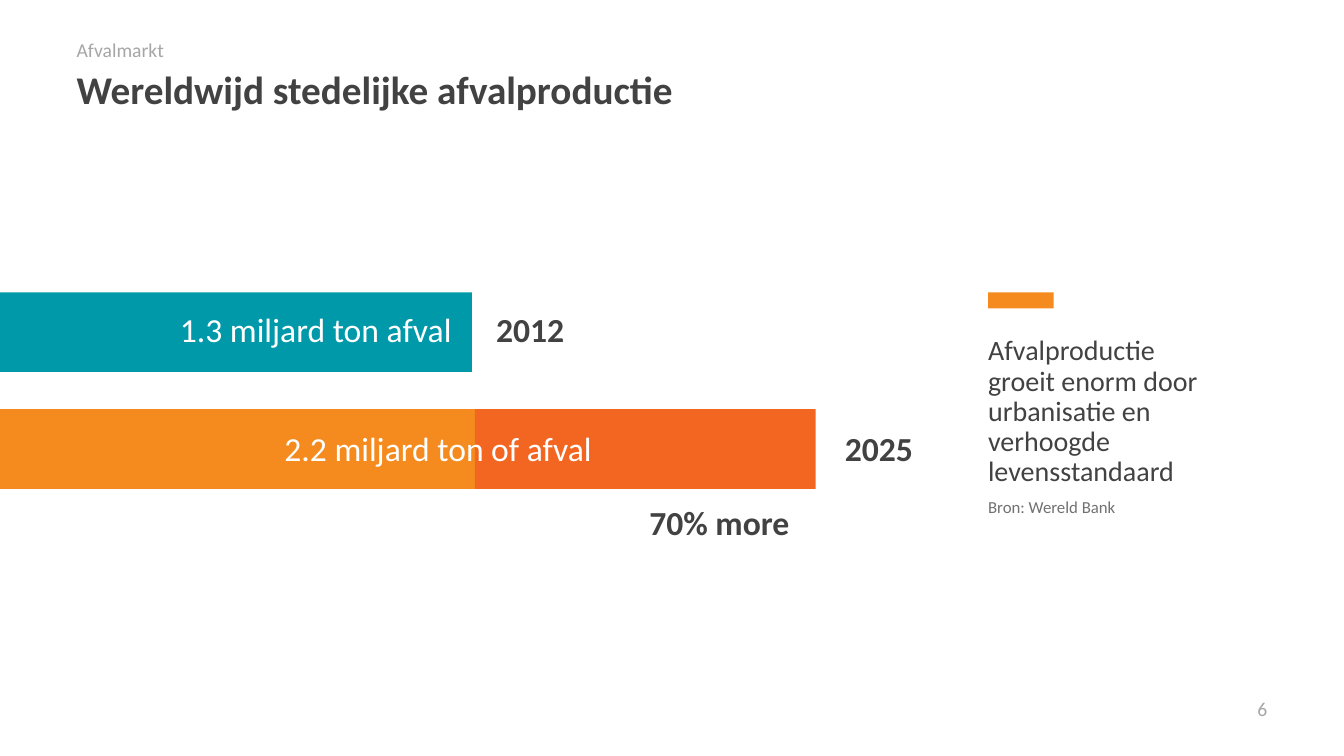
"""Build the slide on worldwide urban waste production."""
from dataclasses import dataclass

from pptx import Presentation
from pptx import util as u
from pptx.dml import color
from pptx.enum import shapes, text

COLORS = {
    "dark": "424242",
    "grey": "A6A6A6",
    "source": "717171",
    "white": "FFFFFF",
    "teal": "0099AA",
    "orange": "F58B1E",
    "red": "F26621",
}
FONT = "Calibri"
MARGIN = 0.76
CONTENT_WIDTH = 11.81
NOTE_LEFT = 9.8
BAR_HEIGHT = 0.79
TOP_2012 = 2.9
TOP_2025 = 4.06
LABEL_2012 = 3.11
LABEL_2025 = 4.29


@dataclass(frozen=True)
class Bar:
    left: float
    top: float
    width: float
    color: str
    height: float = BAR_HEIGHT


@dataclass(frozen=True)
class Label:
    words: str
    left: float
    top: float
    width: float
    height: float
    size: int = 24
    color: str = "dark"
    bold: bool = False
    align: text.PP_ALIGN = text.PP_ALIGN.LEFT
    anchor: text.MSO_ANCHOR = text.MSO_ANCHOR.TOP
    line_spacing: float = 0.9


RIGHT = text.PP_ALIGN.RIGHT
MIDDLE = text.MSO_ANCHOR.MIDDLE

BARS = [
    Bar(NOTE_LEFT, TOP_2012, 0.65, "orange", height=0.16),
    Bar(0, TOP_2012, 4.68, "teal"),
    Bar(0, TOP_2025, 6.04, "orange"),
    Bar(4.71, TOP_2025, 3.38, "red"),
]

LABELS = [
    Label("Wereldwijd stedelijke afvalproductie", MARGIN, 0.78, CONTENT_WIDTH, 0.26,
          size=28, bold=True, anchor=MIDDLE),
    Label("Afvalmarkt", MARGIN, 0.4, CONTENT_WIDTH, 0.24, size=14, color="grey"),
    Label("1.3 miljard ton afval", 0, LABEL_2012, 4.48, 0.36, color="white", align=RIGHT),
    Label("2.2 miljard ton of afval", 0, LABEL_2025, 5.87, 0.4, color="white", align=RIGHT),
    Label("2012", 4.92, LABEL_2012, 1.13, 0.35, bold=True),
    Label("2025", 8.38, LABEL_2025, 1.13, 0.35, bold=True),
    Label("70% more", 6.44, 5.02, 1.6, 0.32, bold=True),
    Label("Afvalproductie groeit enorm door urbanisatie en verhoogde levensstandaard",
          NOTE_LEFT, 3.34, 2.36, 1.5, size=20),
    Label("Bron: Wereld Bank", NOTE_LEFT, 4.93, 3, 0.2, size=12, color="source",
          line_spacing=1.0),
    Label("6", 11.78, 6.97, 0.79, 0.13, size=14, color="grey", align=RIGHT,
          anchor=MIDDLE, line_spacing=1.0),
]


def rgb(name: str) -> color.RGBColor:
    return color.RGBColor.from_string(COLORS[name])


def draw_bar(slide, bar: Bar) -> None:
    shape = slide.shapes.add_shape(
        shapes.MSO_SHAPE.RECTANGLE,
        u.Inches(bar.left), u.Inches(bar.top), u.Inches(bar.width), u.Inches(bar.height))
    shape.shadow.inherit = False
    shape.fill.solid()
    shape.fill.fore_color.rgb = rgb(bar.color)
    shape.line.fill.background()


def draw_label(slide, label: Label) -> None:
    box = slide.shapes.add_textbox(
        u.Inches(label.left), u.Inches(label.top),
        u.Inches(label.width), u.Inches(label.height))
    frame = box.text_frame
    frame.word_wrap = True
    frame.vertical_anchor = label.anchor
    frame.margin_left = frame.margin_right = u.Inches(0)
    frame.margin_top = frame.margin_bottom = u.Inches(0)
    paragraph = frame.paragraphs[0]
    paragraph.alignment = label.align
    paragraph.line_spacing = label.line_spacing
    run = paragraph.add_run()
    run.text = label.words
    run.font.name = FONT
    run.font.size = u.Pt(label.size)
    run.font.bold = label.bold
    run.font.color.rgb = rgb(label.color)


def main() -> None:
    presentation = Presentation()
    presentation.slide_width = u.Inches(13.33)
    presentation.slide_height = u.Inches(7.5)
    slide = presentation.slides.add_slide(presentation.slide_layouts[6])
    for bar in BARS:
        draw_bar(slide, bar)
    for label in LABELS:
        draw_label(slide, label)
    presentation.save("out.pptx")


if __name__ == "__main__":
    main()
